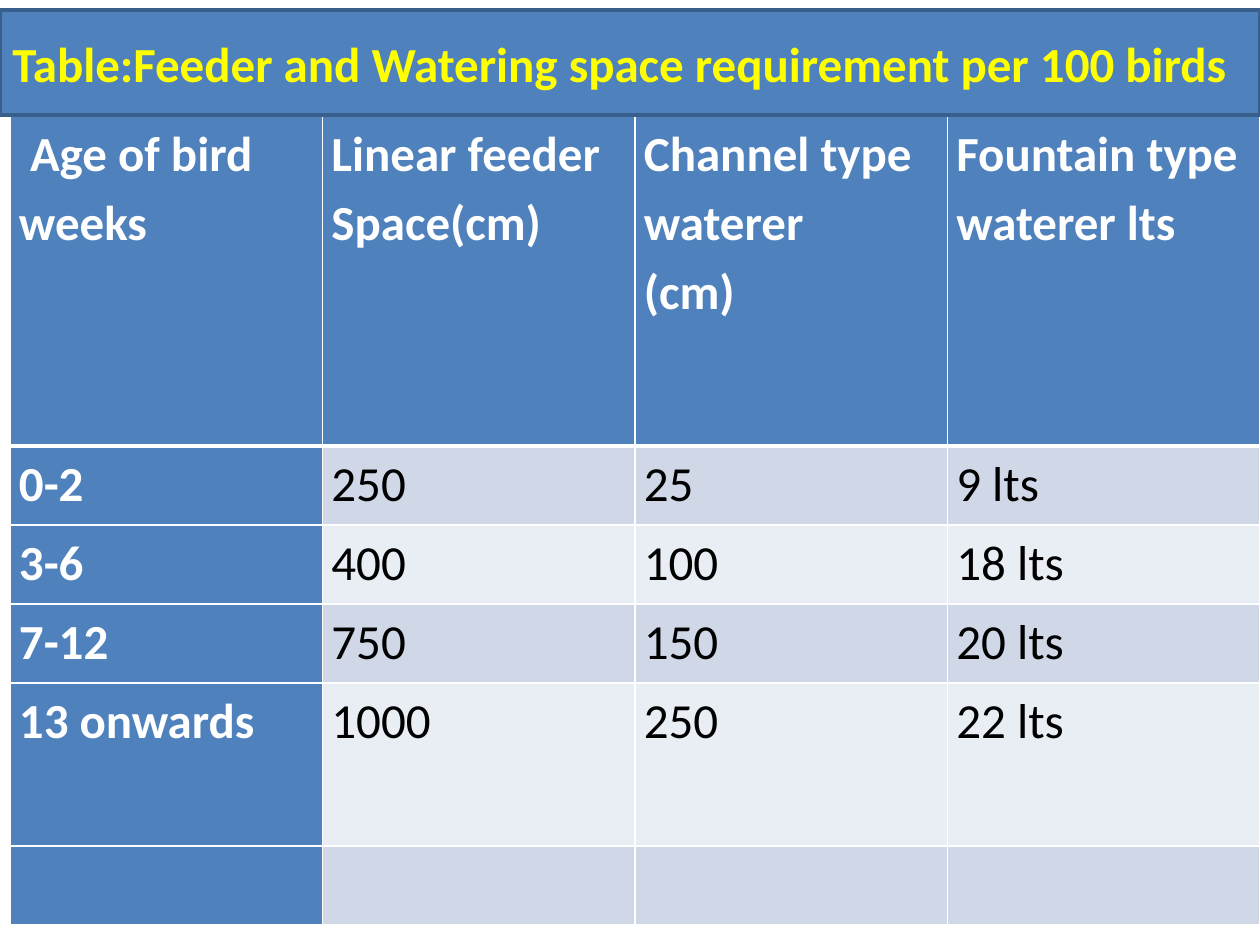
from lxml import etree
from pptx import Presentation
from pptx.dml.color import RGBColor
from pptx.enum.shapes import MSO_SHAPE
from pptx.enum.text import MSO_ANCHOR, PP_ALIGN
from pptx.oxml.ns import qn
from pptx.util import Emu, Pt

RECT = MSO_SHAPE.RECTANGLE
MIDDLE = MSO_ANCHOR.MIDDLE
TOP = MSO_ANCHOR.TOP
LEFT = PP_ALIGN.LEFT

SCALE = 914400 / 126
FONT = "Calibri"
BLUE, EDGE, WHITE = "4F81BD", "3A5F8C", "FFFFFF"
BLACK, YELLOW = "000000", "FFFF00"
BANDS = ["D0D8E8", "E9EDF4"]

TITLE = "Table:Feeder and Watering space requirement per 100 birds"
ROWS = [
    (330, [[" Age of bird", "weeks"], ["Linear feeder", "Space(cm)"],
           ["Channel type waterer", "(cm)"], ["Fountain type waterer lts"]]),
    (79, [["0-2"], ["250"], ["25"], ["9 lts"]]),
    (79, [["3-6"], ["400"], ["100"], ["18 lts"]]),
    (79, [["7-12"], ["750"], ["150"], ["20 lts"]]),
    (163, [["13 onwards"], ["1000"], ["250"], ["22 lts"]]),
    (79, [[], [], [], []]),
]


def px(size):
    return Emu(round(size * SCALE))


def paint(target, color):
    target.solid()
    target.fore_color.rgb = RGBColor.from_string(color)


def write(frame, lines, color, bold, space=None):
    for i, line in enumerate(lines):
        para = frame.paragraphs[0] if i == 0 else frame.add_paragraph()
        para.alignment = LEFT
        if space:
            para.line_spacing = space
        run = para.add_run()
        run.text = line
        run.font.name = FONT
        run.font.size = Pt(28)
        run.font.bold = bold
        run.font.color.rgb = RGBColor.from_string(color)


def border(cell, widths):
    props = cell._tc.get_or_add_tcPr()
    for side, width in zip("LRTB", widths):
        line = etree.SubElement(props, qn(f"a:ln{side}"), w=str(Pt(width)))
        fill = etree.SubElement(line, qn("a:solidFill"))
        etree.SubElement(fill, qn("a:srgbClr"), val=WHITE)


def add_title(slide, x, y, w, h):
    bar = slide.shapes.add_shape(RECT, px(x), px(y), px(w), px(h))
    bar.shadow.inherit = False
    paint(bar.fill, BLUE)
    paint(bar.line.fill, EDGE)
    bar.line.width = Pt(2)
    frame = bar.text_frame
    frame.word_wrap = True
    frame.vertical_anchor = MIDDLE
    write(frame, [TITLE], YELLOW, True)


def add_grid(slide, x, y, w, h):
    count = len(ROWS[0][1])
    table = slide.shapes.add_table(
        len(ROWS), count, px(x), px(y), px(w), px(h)).table
    for col in table.columns:
        col.width = px(w / count)
    for r, (high, texts) in enumerate(ROWS):
        table.rows[r].height = px(high)
        for c, lines in enumerate(texts):
            cell = table.cell(r, c)
            head = r == 0 or c == 0
            border(cell, (1, 1, 3 if r == 1 else 1, 3 if r == 0 else 1))
            paint(cell.fill, BLUE if head else BANDS[(r - 1) % 2])
            cell.margin_left = cell.margin_right = px(9)
            cell.margin_top = cell.margin_bottom = 0
            cell.vertical_anchor = TOP
            write(cell.text_frame, lines, WHITE if head else BLACK, head, 1.15)


def main():
    deck = Presentation()
    deck.slide_width, deck.slide_height = px(1260), px(945)
    slide = deck.slides.add_slide(deck.slide_layouts[6])
    add_grid(slide, 10, 116, 1250, sum(high for high, _ in ROWS))
    add_title(slide, 0, 10, 1260, 105)
    deck.save("out.pptx")


if __name__ == "__main__":
    main()
